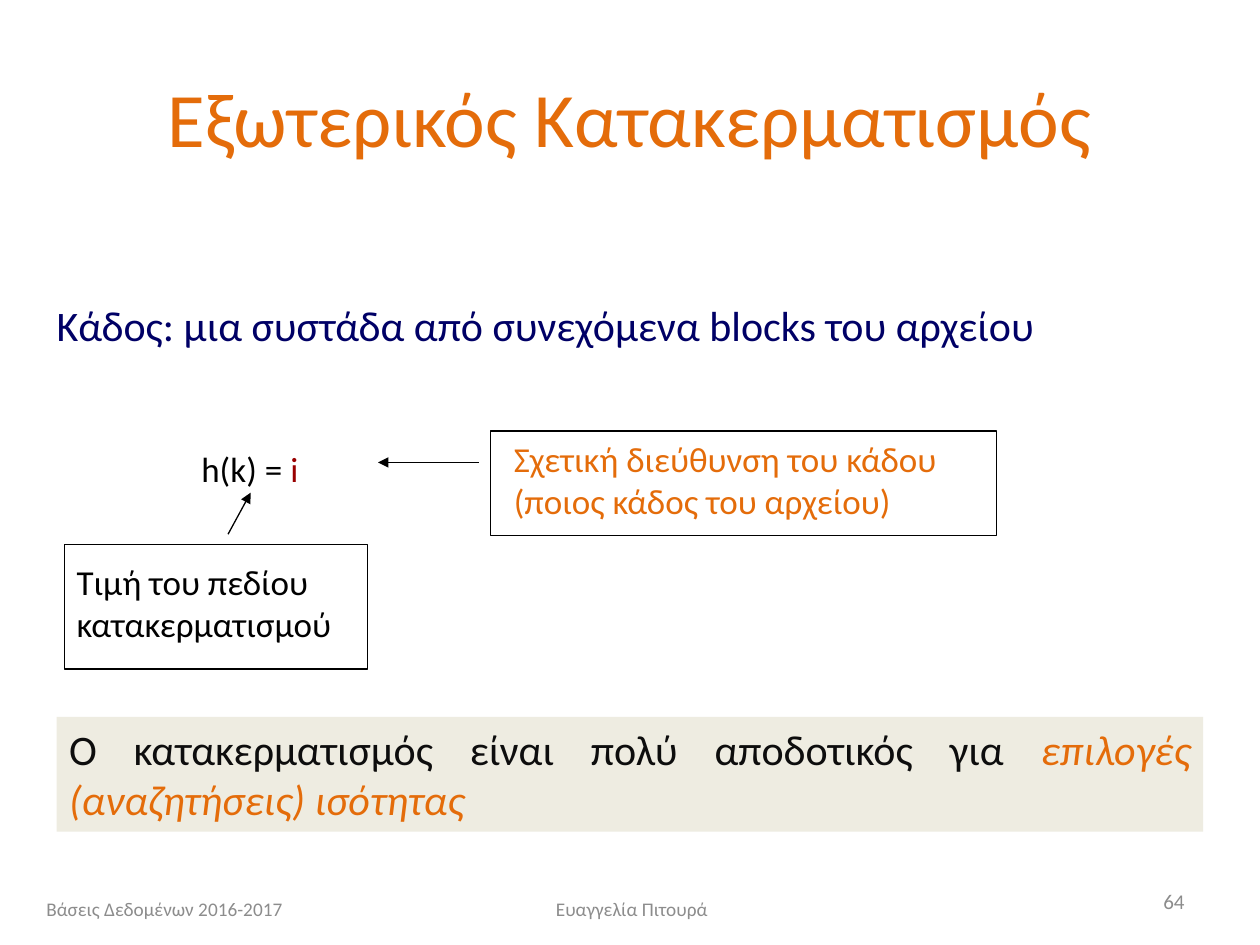
from lxml import etree
from pptx import Presentation
from pptx.dml.color import RGBColor
from pptx.enum.shapes import MSO_CONNECTOR, MSO_SHAPE
from pptx.enum.text import MSO_ANCHOR, PP_ALIGN
from pptx.oxml.ns import qn
from pptx.util import Emu, Pt

PX = 9144  # EMU per px, 100 px to the inch
FONT = "Calibri"
TITLE_ONLY = 5

ORANGE = RGBColor(0xE4, 0x6C, 0x0A)
NAVY = RGBColor(0x00, 0x00, 0x66)
DARK_RED = RGBColor(0x99, 0x00, 0x00)
BLACK = RGBColor(0x00, 0x00, 0x00)
NEAR_BLACK = RGBColor(0x0D, 0x0D, 0x0D)
GREY = RGBColor(0x8C, 0x8C, 0x8C)
BEIGE = RGBColor(0xEE, 0xEC, 0xE1)

LEFT, CENTER, RIGHT, JUSTIFY = (
    PP_ALIGN.LEFT, PP_ALIGN.CENTER, PP_ALIGN.RIGHT, PP_ALIGN.JUSTIFY)
TOP, MIDDLE = MSO_ANCHOR.TOP, MSO_ANCHOR.MIDDLE
RECTANGLE, STRAIGHT = MSO_SHAPE.RECTANGLE, MSO_CONNECTOR.STRAIGHT


def px(*lengths):
    return [Emu(length * PX) for length in lengths]


class SlideBuilder:
    def __init__(self, slide):
        self.slide = slide

    def set_text(self, shape, parts, size, align, anchor):
        """Fill a shape with one paragraph of (text, colour, italic) parts."""
        frame = shape.text_frame
        frame.word_wrap = True
        frame.vertical_anchor = anchor
        paragraph = frame.paragraphs[0]
        paragraph.alignment = align
        for text, colour, italic in parts:
            run = paragraph.add_run()
            run.text = text
            run.font.name = FONT
            run.font.size = Pt(size)
            run.font.color.rgb = colour
            run.font.italic = italic

    def title(self, box, text, colour, size):
        title = self.slide.shapes.title
        title.left, title.top, title.width, title.height = px(*box)
        self.set_text(title, [(text, colour, False)], size, CENTER, MIDDLE)

    def text(self, box, parts, size, align=LEFT, anchor=TOP):
        label = self.slide.shapes.add_textbox(*px(*box))
        self.set_text(label, parts, size, align, anchor)

    def rectangle(self, box, fill=None):
        """Draw a filled panel, or a thin black frame if no fill is given."""
        rectangle = self.slide.shapes.add_shape(RECTANGLE, *px(*box))
        rectangle.shadow.inherit = False
        if fill is None:
            rectangle.fill.background()
            rectangle.line.color.rgb = BLACK
            rectangle.line.width = Pt(0.75)
        else:
            rectangle.fill.solid()
            rectangle.fill.fore_color.rgb = fill
            rectangle.line.fill.background()
        return rectangle

    def panel(self, box, parts, size, fill):
        self.set_text(self.rectangle(box, fill), parts, size, JUSTIFY, TOP)

    def arrow(self, start, end):
        arrow = self.slide.shapes.add_connector(STRAIGHT, *px(*start, *end))
        arrow.line.color.rgb = BLACK
        arrow.line.width = Pt(0.75)
        properties = arrow.element.spPr
        etree.SubElement(properties.find(qn("a:ln")), qn("a:tailEnd"), type="triangle")
        etree.SubElement(properties, qn("a:effectLst"))


def main():
    prs = Presentation()
    prs.slide_width, prs.slide_height = px(1000, 750)
    page = SlideBuilder(prs.slides.add_slide(prs.slide_layouts[TITLE_ONLY]))

    page.title((50, 30, 900, 125), "Εξωτερικός Κατακερματισμός", ORANGE, 44)

    # Definition of a bucket
    page.text((35, 233, 875, 50),
              [("Κάδος: μια συστάδα από συνεχόμενα blocks του αρχείου", NAVY, False)], 24)

    # Hash function
    page.text((150, 350, 633, 43),
              [("h(k) = ", BLACK, False), ("i", DARK_RED, False)], 20)

    # Note on the key
    page.text((51, 440, 250, 77),
              [("Τιμή του πεδίου κατακερματισμού", BLACK, False)], 20)
    page.rectangle((51, 432, 241, 99))
    page.arrow((181, 424), (199, 391))

    # Note on the bucket address
    page.text((398, 342, 393, 77),
              [("Σχετική διεύθυνση του κάδου (ποιος κάδος του αρχείου)", ORANGE, False)], 20)
    page.rectangle((389, 342, 402, 83))
    page.arrow((380, 367), (300, 367))

    # Conclusion
    page.panel((45, 569, 910, 91),
               [("Ο κατακερματισμός είναι πολύ αποδοτικός για ", NEAR_BLACK, False),
                ("επιλογές (αναζητήσεις) ισότητας", ORANGE, True)], 24, BEIGE)

    # Footer
    for box, text, size, align in (
        ((27, 701, 233, 40), "Βάσεις Δεδομένων 2016-2017", 11, LEFT),
        ((343, 701, 317, 40), "Ευαγγελία Πιτουρά", 11, CENTER),
        ((717, 695, 233, 40), "64", 12, RIGHT),
    ):
        page.text(box, [(text, GREY, False)], size, align, MIDDLE)

    prs.save("out.pptx")


if __name__ == "__main__":
    main()
